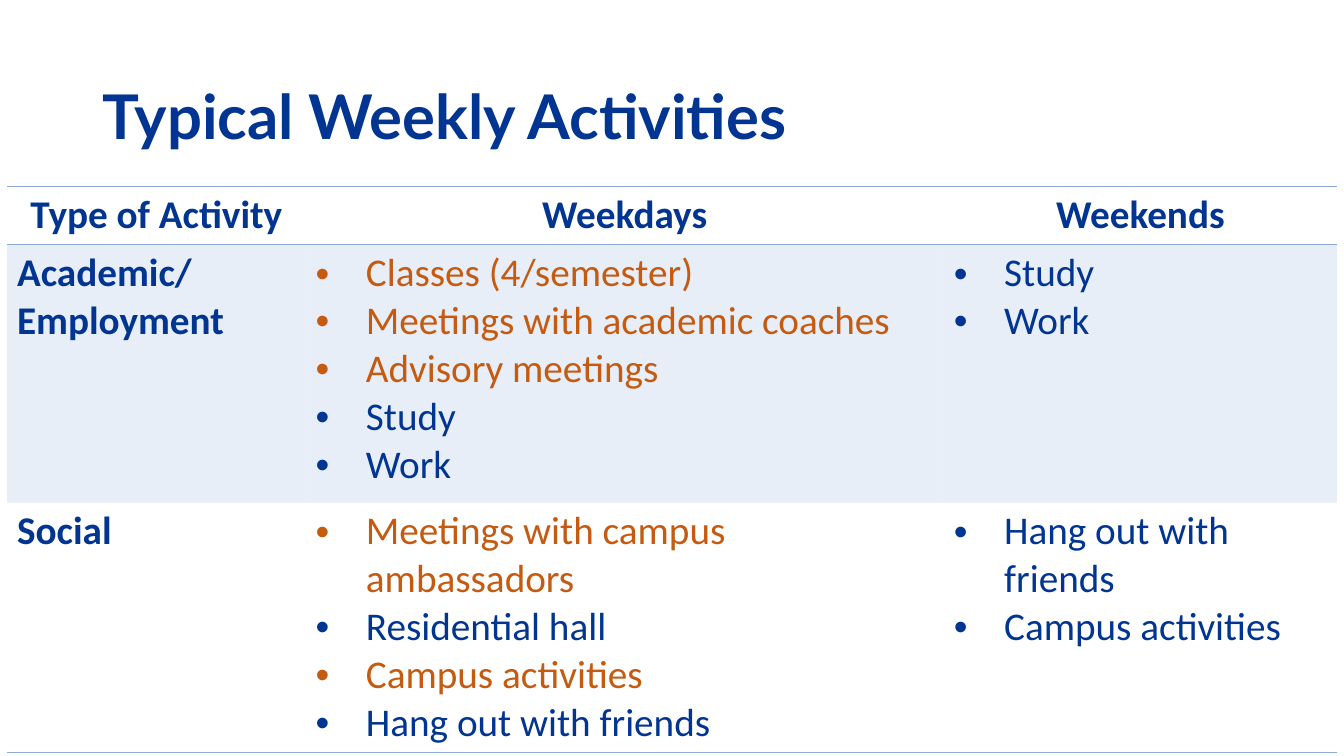
from pptx import Presentation
from pptx.dml.color import RGBColor
from pptx.enum.text import MSO_ANCHOR, MSO_AUTO_SIZE, PP_ALIGN
from pptx.oxml.ns import qn
from pptx.util import Inches, Pt
from lxml.etree import SubElement

NAVY, ORANGE, BLUE = "013591", "C55A11", "8EAADB"


def color(hex_string):
    return RGBColor.from_string(hex_string)


def add_border(cell, side, visible):
    line = SubElement(cell._tc.get_or_add_tcPr(), qn(f"a:ln{side}"), w=str(Pt(1)))
    if visible:
        solid = SubElement(line, qn("a:solidFill"))
        SubElement(solid, qn("a:srgbClr"), val=BLUE)
    else:
        SubElement(line, qn("a:noFill"))


presentation = Presentation()
presentation.slide_width = Inches(13.33)
presentation.slide_height = Inches(7.5)
slide = presentation.slides.add_slide(presentation.slide_layouts[5])

# Title
title = slide.shapes.title
title.left, title.top = Inches(0.92), Inches(0.62)
title.width, title.height = Inches(11.5), Inches(0.95)
frame = title.text_frame
frame.text = "Typical Weekly Activities"
frame.auto_size = MSO_AUTO_SIZE.NONE
frame.vertical_anchor = MSO_ANCHOR.BOTTOM
paragraph = frame.paragraphs[0]
paragraph.alignment = PP_ALIGN.LEFT
paragraph.line_spacing = 0.9
paragraph.font.name, paragraph.font.size = "Lato", Pt(44)
paragraph.font.bold = True
paragraph.font.color.rgb = color(NAVY)

# Table texts, and the weekday lines set in orange
activities = [
    [["Type of Activity"], ["Weekdays"], ["Weekends"]],
    [["Academic/", "Employment"],
     ["Classes (4/semester)", "Meetings with academic coaches",
      "Advisory meetings", "Study", "Work"],
     ["Study", "Work"]],
    [["Social"],
     ["Meetings with campus ambassadors", "Residential hall",
      "Campus activities", "Hang out with friends"],
     ["Hang out with friends", "Campus activities"]],
]
orange_weekdays = {"Classes (4/semester)", "Meetings with academic coaches",
                   "Advisory meetings", "Meetings with campus ambassadors",
                   "Campus activities"}
column_widths = [2.96, 6.33, 3.9]
row_heights = [0.55, 2.56, 2.32]

# Table frame
table = slide.shapes.add_table(
    len(row_heights), len(column_widths), Inches(0.07), Inches(1.85),
    Inches(sum(column_widths)), Inches(sum(row_heights))).table
table.first_row = table.horz_banding = False
for column, width in zip(table.columns, column_widths):
    column.width = Inches(width)
for row, height in zip(table.rows, row_heights):
    row.height = Inches(height)

# Cells
for row_index, row_texts in enumerate(activities):
    for column_index, lines in enumerate(row_texts):
        cell = table.cell(row_index, column_index)
        header = row_index == 0
        bulleted = not header and column_index > 0

        # Rules above and below the header and at the foot of the table
        for side in "LRTB":
            add_border(cell, side, (side == "T" and row_index < 2)
                       or (side == "B" and row_index != 1))
        if row_index == 1:
            cell.fill.solid()
            cell.fill.fore_color.rgb = color(BLUE)
            tint = cell._tc.tcPr.find(qn("a:solidFill")).find(qn("a:srgbClr"))
            SubElement(tint, qn("a:alpha"), val="20000")
        else:
            cell.fill.background()

        cell.text_frame.text = "\n".join(lines)
        for paragraph, text in zip(cell.text_frame.paragraphs, lines):
            paragraph.alignment = PP_ALIGN.CENTER if header else PP_ALIGN.LEFT
            if bulleted:
                properties = paragraph._p.get_or_add_pPr()
                properties.set("marL", str(Inches(0.5)))
                properties.set("indent", str(-Inches(0.5)))
                SubElement(properties, qn("a:buFont"), typeface="Arial")
                SubElement(properties, qn("a:buChar"), char="•")
            in_orange = column_index == 1 and text in orange_weekdays
            paragraph.font.name, paragraph.font.size = "Calibri", Pt(28)
            paragraph.font.bold = not bulleted
            paragraph.font.color.rgb = color(ORANGE if in_orange else NAVY)

presentation.save("out.pptx")
